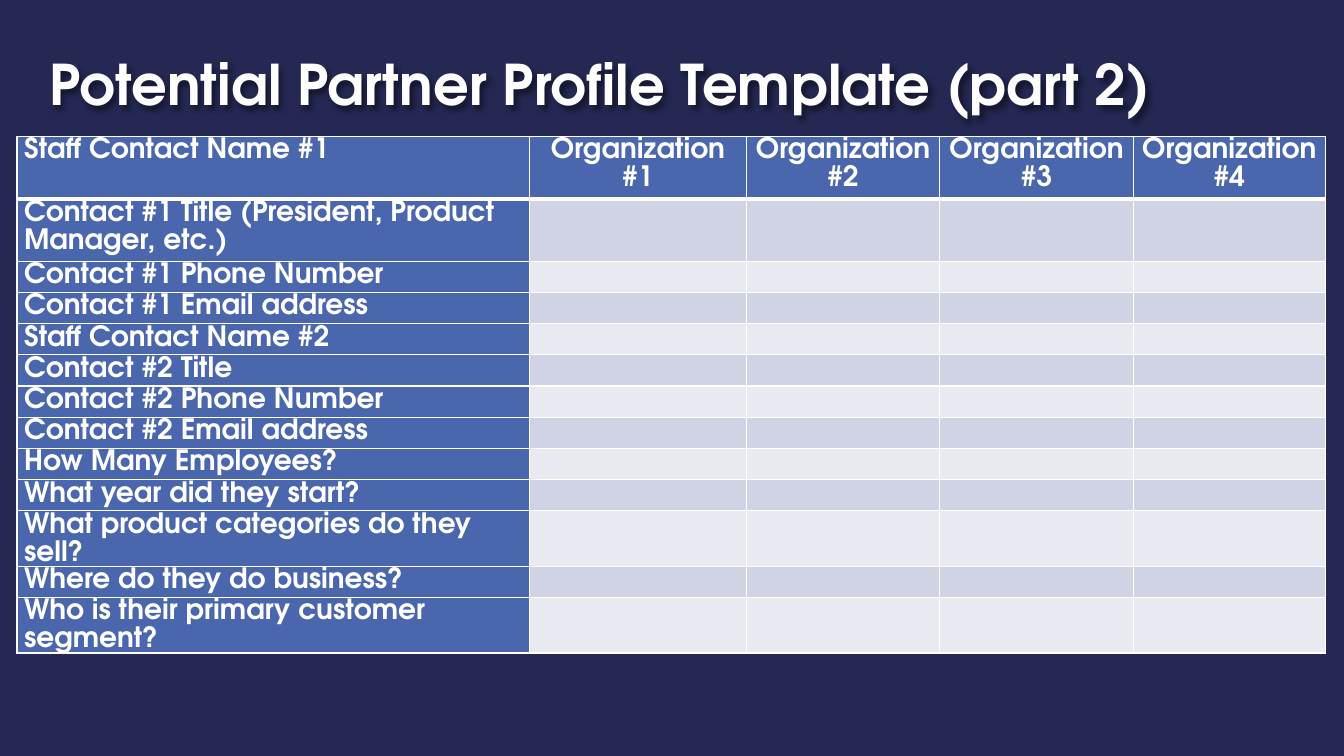
import pptx
import pptx.util
import pptx.dml.color
import pptx.enum.text
from lxml import etree
from pptx.oxml.ns import qn

Pt = pptx.util.Pt
PP_ALIGN = pptx.enum.text.PP_ALIGN
COLORS = {"background": "242852", "title": "FEFEFE", "white": "FFFFFF", "label": "4A66AC",
          "band_dark": "D0D3E3", "band_light": "E9EAF1", "shadow": "000000"}
FONT = "TeX Gyre Adventor"
TITLE_FORMAT = {"name": FONT, "size": Pt(40), "bold": True}
CELL_FORMAT = {"name": FONT, "size": Pt(20), "bold": True}
CELL_MARGINS = {"margin_left": Pt(5), "margin_top": 0, "margin_right": Pt(5), "margin_bottom": 0}
LINE_PITCH = Pt(19.8)

HEADERS = ["Staff Contact Name #1"] + [f"Organization #{n}" for n in range(1, 5)]
QUESTIONS = [
    ("Contact #1 Title (President, Product Manager, etc.)", 44.6),
    ("Contact #1 Phone Number", 22.3),
    ("Contact #1 Email address", 22.3),
    ("Staff Contact Name #2", 22.3),
    ("Contact #2 Title", 22.3),
    ("Contact #2 Phone Number", 22.3),
    ("Contact #2 Email address", 22.3),
    ("How Many Employees?", 22.3),
    ("What year did they start?", 22.3),
    ("What product categories do they sell?", 39.6),
    ("Where do they do business?", 22.3),
    ("Who is their primary customer segment?", 39.6),
]
HEADER_HEIGHT = 44.6
COLUMN_WIDTHS = [366, 155, 138, 138.5, 137]


def rgb(name):
    return pptx.dml.color.RGBColor.from_string(COLORS[name])


def write(p, text, fmt, color):
    r = p.add_run()
    r.text = text
    r.font.color.rgb = rgb(color)
    for key, value in fmt.items():
        setattr(r.font, key, value)


def add_shadow(sp):
    effects = etree.SubElement(sp._element.spPr, qn("a:effectLst"))
    shadow = etree.SubElement(effects, qn("a:outerShdw"), blurRad=str(Pt(4)),
                              dist=str(Pt(3)), dir="2700000", algn="tl")
    color = etree.SubElement(shadow, qn("a:srgbClr"), val=COLORS["shadow"])
    etree.SubElement(color, qn("a:alpha"), val="43000")


def set_borders(cell, widths):
    """Draw white cell edges; widths maps L, R, T and B to points."""
    tcPr = cell._tc.get_or_add_tcPr()
    for i, side in enumerate("LRTB"):
        ln = etree.Element(qn(f"a:ln{side}"), w=str(Pt(widths[side])))
        fill = etree.SubElement(ln, qn("a:solidFill"))
        etree.SubElement(fill, qn("a:srgbClr"), val=COLORS["white"])
        tcPr.insert(i, ln)


def add_title(s, left, top, width, height):
    sp = s.shapes.add_textbox(Pt(left), Pt(top), Pt(width), Pt(height))
    add_shadow(sp)
    tf = sp.text_frame
    tf.word_wrap = True
    tf.vertical_anchor = pptx.enum.text.MSO_ANCHOR.BOTTOM
    write(tf.paragraphs[0], "Potential Partner Profile Template (part 2)", TITLE_FORMAT, "title")


def fill_cell(cell, row, col, text):
    for key, value in CELL_MARGINS.items():
        setattr(cell, key, value)
    band = "band_dark" if row % 2 else "band_light"
    cell.fill.solid()
    cell.fill.fore_color.rgb = rgb("label" if row == 0 or col == 0 else band)
    set_borders(cell, {"L": 1, "R": 1, "T": 3 if row == 1 else 1, "B": 3 if row == 0 else 1})
    p = cell.text_frame.paragraphs[0]
    if text:
        p.line_spacing = LINE_PITCH
        p.alignment = PP_ALIGN.CENTER if col else PP_ALIGN.LEFT
        write(p, text, CELL_FORMAT, "white")
    else:
        # A small empty line keeps the row from growing.
        etree.SubElement(p._p, qn("a:endParaRPr"), sz="1000")


def add_profile_table(s, left, top):
    heights = [HEADER_HEIGHT] + [height for _, height in QUESTIONS]
    rows = [HEADERS] + [[question] + [""] * 4 for question, _ in QUESTIONS]
    table = s.shapes.add_table(len(rows), len(HEADERS), Pt(left), Pt(top),
                               Pt(sum(COLUMN_WIDTHS)), Pt(sum(heights))).table
    table.horz_banding = False
    for column, width in zip(table.columns, COLUMN_WIDTHS):
        column.width = Pt(width)
    for i, (texts, height) in enumerate(zip(rows, heights)):
        table.rows[i].height = Pt(height)
        for j, text in enumerate(texts):
            fill_cell(table.cell(i, j), i, j, text)


def main():
    prs = pptx.Presentation()
    prs.slide_width, prs.slide_height = Pt(960), Pt(540)
    s = prs.slides.add_slide(prs.slide_layouts[6])
    s.background.fill.solid()
    s.background.fill.fore_color.rgb = rgb("background")
    add_title(s, 28.2, 10.6, 832, 76.5)
    add_profile_table(s, 12.2, 97.4)
    prs.save("out.pptx")


if __name__ == "__main__":
    main()
